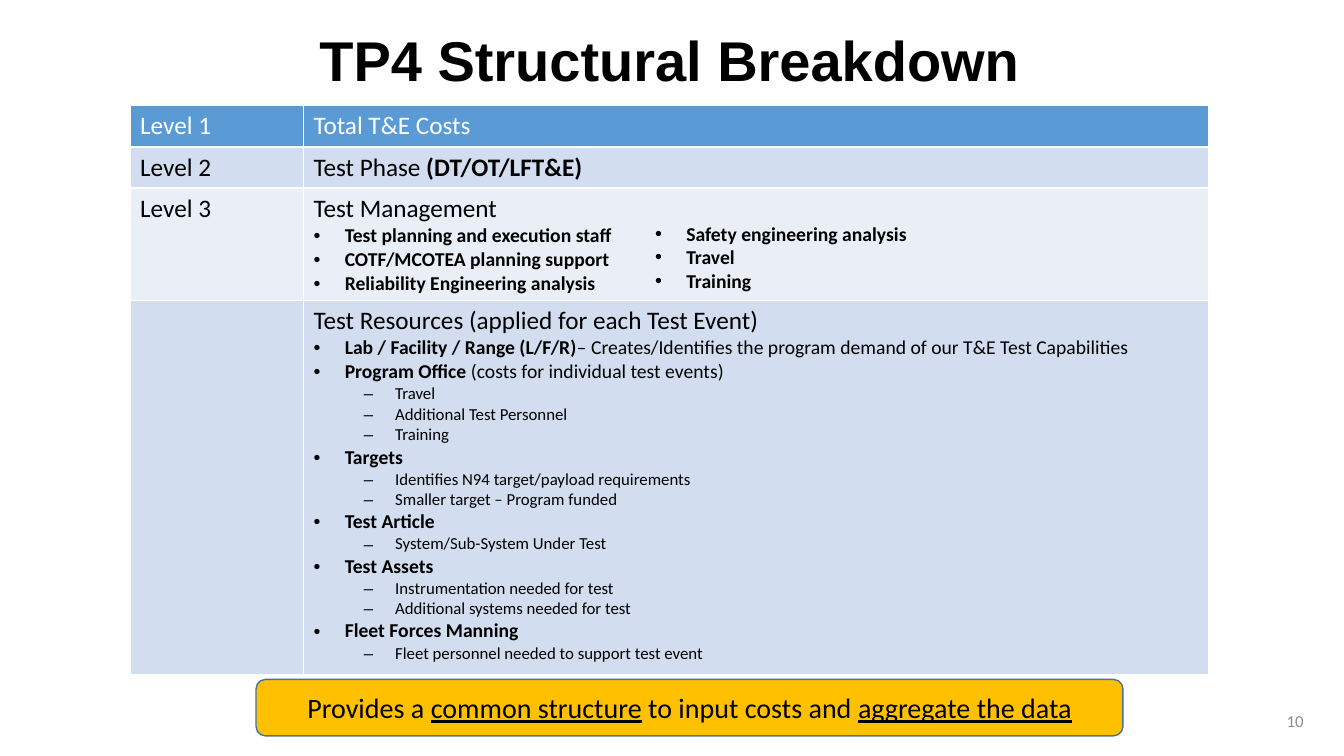
from dataclasses import dataclass

from lxml import etree
from pptx import Presentation
from pptx.dml.color import RGBColor
from pptx.enum.shapes import MSO_SHAPE
from pptx.enum.text import MSO_ANCHOR, PP_ALIGN
from pptx.oxml.ns import qn
from pptx.util import Inches, Pt

ROUNDED = MSO_SHAPE.ROUNDED_RECTANGLE
MIDDLE, TOP = MSO_ANCHOR.MIDDLE, MSO_ANCHOR.TOP
LEFT, CENTER, RIGHT = PP_ALIGN.LEFT, PP_ALIGN.CENTER, PP_ALIGN.RIGHT


@dataclass(frozen=True)
class Theme:
    heading_font: str = "Arial"
    body_font: str = "Calibri"
    black: str = "000000"
    white: str = "FFFFFF"
    grey: str = "8C8C8C"
    header: str = "5B9BD5"
    band_dark: str = "D2DEEF"
    band_light: str = "EAEFF7"
    banner: str = "FFC000"
    banner_line: str = "43739E"
    title_size: int = 40
    banner_size: int = 20
    level_size: int = 18
    item_size: int = 14
    detail_size: int = 12


class SlideBuilder:
    def __init__(self, presentation, theme):
        self.presentation = presentation
        self.theme = theme
        self.slide = presentation.slides.add_slide(presentation.slide_layouts[6])

    def across(self, percent):
        return round(self.presentation.slide_width * percent / 100)

    def down(self, percent):
        return round(self.presentation.slide_height * percent / 100)

    def box(self, left, top, width, height):
        return self.across(left), self.down(top), self.across(width), self.down(height)

    def bullet(self, paragraph, character, indent):
        properties = paragraph._p.get_or_add_pPr()
        properties.set("marL", str(Inches(indent)))
        properties.set("indent", str(-Inches(0.31)))
        etree.SubElement(properties, qn("a:buFont")).set("typeface", "Arial")
        etree.SubElement(properties, qn("a:buChar")).set("char", character)

    def add_text(self, paragraph, text, size, color=None, font=None, align=LEFT, underlined=False):
        paragraph.alignment = align
        paragraph.font.size = Pt(size)
        paragraph.font.name = font or self.theme.body_font
        paragraph.font.color.rgb = RGBColor.from_string(color or self.theme.black)
        for position, part in enumerate(text.split("*")):
            if part:
                run = paragraph.add_run()
                run.text = part
                emphasized = position % 2 == 1
                run.font.bold = emphasized and not underlined
                run.font.underline = emphasized and underlined

    def outline(self, frame, lines, color=None):
        for number, line in enumerate(lines):
            paragraph = frame.add_paragraph() if number else frame.paragraphs[0]
            if line.startswith("• "):
                self.bullet(paragraph, "•", 0.31)
                self.add_text(paragraph, line[2:], self.theme.item_size, color)
            elif line.startswith("– "):
                paragraph.level = 1
                self.bullet(paragraph, "–", 0.81)
                self.add_text(paragraph, line[2:], self.theme.detail_size, color)
            else:
                self.add_text(paragraph, line, self.theme.level_size, color)

    def text_frame(self, box, anchor):
        frame = self.slide.shapes.add_textbox(*self.box(*box)).text_frame
        frame.word_wrap = True
        frame.vertical_anchor = anchor
        return frame

    def label(self, box, text, size, **style):
        paragraph = self.text_frame(box, MIDDLE).paragraphs[0]
        self.add_text(paragraph, text, size, **style)
        return paragraph

    def bullet_list(self, box, lines):
        self.outline(self.text_frame(box, TOP), lines)

    def banner(self, box, text):
        shape = self.slide.shapes.add_shape(ROUNDED, *self.box(*box))
        shape.shadow.inherit = False
        shape.fill.solid()
        shape.fill.fore_color.rgb = RGBColor.from_string(self.theme.banner)
        shape.line.color.rgb = RGBColor.from_string(self.theme.banner_line)
        shape.line.width = Pt(1)
        frame = shape.text_frame
        frame.word_wrap = True
        frame.vertical_anchor = MIDDLE
        self.add_text(frame.paragraphs[0], text, self.theme.banner_size,
                      align=CENTER, underlined=True)

    def cell_borders(self, cell):
        properties = cell._tc.get_or_add_tcPr()
        for side in ("lnL", "lnR", "lnT", "lnB"):
            line = etree.SubElement(properties, qn(f"a:{side}"), w=str(Pt(1)))
            fill = etree.SubElement(line, qn("a:solidFill"))
            etree.SubElement(fill, qn("a:srgbClr"), val=self.theme.white)

    def table(self, left, top, widths, heights, rows):
        box = self.box(left, top, sum(widths), sum(heights))
        table = self.slide.shapes.add_table(len(rows), len(widths), *box).table
        for column, width in zip(table.columns, widths):
            column.width = self.across(width)
        for row, height, (fill, color, *contents) in zip(table.rows, heights, rows):
            row.height = self.down(height)
            for cell, lines in zip(row.cells, contents):
                self.cell_borders(cell)
                cell.fill.solid()
                cell.fill.fore_color.rgb = RGBColor.from_string(fill)
                self.outline(cell.text_frame, lines, color)


MANAGEMENT = [
    "Test Management",
    "• *Test planning and execution staff*",
    "• *COTF/MCOTEA planning support*",
    "• *Reliability Engineering analysis*",
]
MORE_MANAGEMENT = [
    "• *Safety engineering analysis*",
    "• *Travel*",
    "• *Training*",
]
RESOURCES = [
    "Test Resources (applied for each Test Event)",
    "• *Lab / Facility / Range (L/F/R)*– Creates/Identifies the program demand of our T&E Test Capabilities",
    "• *Program Office* (costs for individual test events)",
    "– Travel",
    "– Additional Test Personnel",
    "– Training",
    "• *Targets*",
    "– Identifies N94 target/payload requirements",
    "– Smaller target – Program funded",
    "• *Test Article*",
    "– System/Sub-System Under Test",
    "• *Test Assets*",
    "– Instrumentation needed for test",
    "– Additional systems needed for test",
    "• *Fleet Forces Manning*",
    "– Fleet personnel needed to support test event",
]


def main():
    presentation = Presentation()
    presentation.slide_width = Inches(13.33)
    presentation.slide_height = Inches(7.5)
    theme = Theme()
    builder = SlideBuilder(presentation, theme)

    title = builder.label((6.67, 1.07, 86.25, 14.67), "*TP4 Structural Breakdown*",
                          theme.title_size, font=theme.heading_font, align=CENTER)
    title.line_spacing = 0.9
    builder.banner((19.05, 89.87, 64.5, 7.47),
                   "Provides a *common structure* to input costs and *aggregate the data*")
    builder.label((75.23, 92.67, 22.5, 5.33), "10", theme.detail_size,
                  color=theme.grey, align=RIGHT)
    builder.table(9.68, 14, (12.9, 67.35), (5.44, 5.44, 14.87, 49.5), [
        (theme.header, theme.white, ["Level 1"], ["Total T&E Costs"]),
        (theme.band_dark, theme.black, ["Level 2"], ["Test Phase *(DT/OT/LFT&E)*"]),
        (theme.band_light, theme.black, ["Level 3"], MANAGEMENT),
        (theme.band_dark, theme.black, [], RESOURCES),
    ])
    builder.bullet_list((48, 28.67, 25.2, 10.8), MORE_MANAGEMENT)
    presentation.save("out.pptx")


if __name__ == "__main__":
    main()
